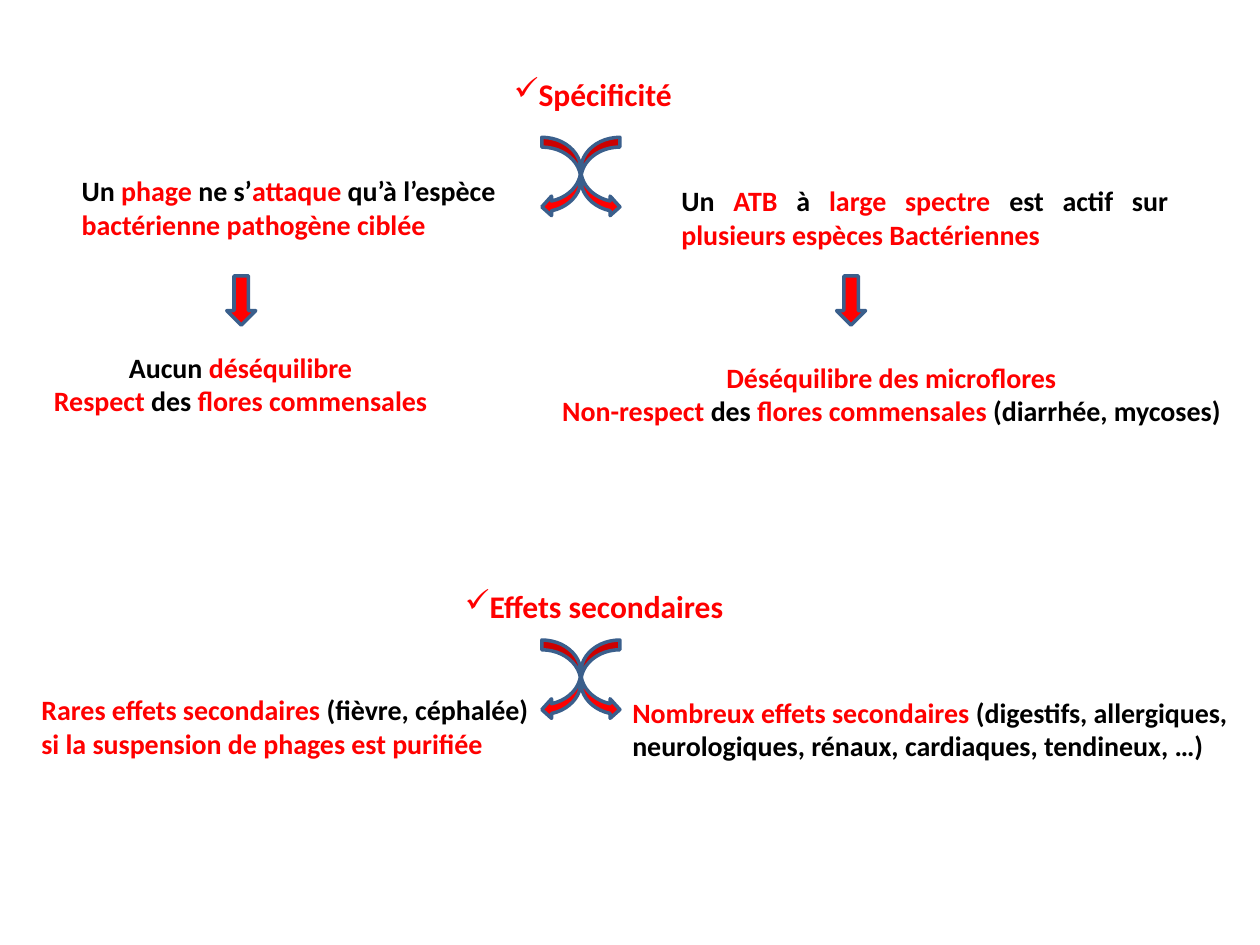
from dataclasses import dataclass

from lxml.etree import SubElement
from pptx import Presentation
from pptx.dml.color import RGBColor
from pptx.enum.shapes import MSO_SHAPE as Shape
from pptx.enum.text import MSO_AUTO_SIZE as AutoSize, PP_ALIGN as Align
from pptx.oxml.ns import qn
from pptx.util import Inches, Pt


@dataclass(frozen=True)
class Theme:
    font: str = "Calibri"
    red: RGBColor = RGBColor(0xFF, 0x00, 0x00)
    black: RGBColor = RGBColor(0x00, 0x00, 0x00)
    outline: RGBColor = RGBColor(0x3A, 0x5F, 0x8C)
    outline_width: Pt = Pt(2)
    heading: Pt = Pt(18)
    body: Pt = Pt(16)


theme = Theme()
deck = Presentation()
deck.slide_width, deck.slide_height = Inches(10), Inches(7.5)
page = deck.slides.add_slide(deck.slide_layouts[6])


def add_text(place, lines, size=theme.body, align=Align.LEFT, wrap=True, bullet=None):
    box = page.shapes.add_textbox(*map(Inches, place))
    frame = box.text_frame
    frame.word_wrap = wrap
    frame.auto_size = AutoSize.SHAPE_TO_FIT_TEXT
    for index, line in enumerate(lines):
        para = frame.paragraphs[0] if index == 0 else frame.add_paragraph()
        para.alignment = align
        if bullet:
            SubElement(para._p.get_or_add_pPr(), qn("a:buChar"), char=bullet)
        for part, words in enumerate(line.split("*")):
            if not words:
                continue
            span = para.add_run()
            span.text = words
            span.font.color.rgb = theme.red if part % 2 else theme.black
            style = {"name": theme.font, "size": size, "bold": True}
            for key, value in style.items():
                setattr(span.font, key, value)


def add_arrow(kind, *place):
    arrow = page.shapes.add_shape(kind, *map(Inches, place))
    arrow.shadow.inherit = False
    arrow.fill.solid()
    arrow.fill.fore_color.rgb = theme.red
    arrow.line.color.rgb = theme.outline
    arrow.line.width = theme.outline_width


headings = [
    ((3.98, 0.55, 1.47, 0.4), "*Spécificité*", 1.09),
    ((3.59, 4.61, 2.28, 0.4), "*Effets secondaires*", 5.08),
]
for place, title, arrow_top in headings:
    add_text(place, [title], size=theme.heading, wrap=False, bullet="✓")
    add_arrow(Shape.CURVED_RIGHT_ARROW, 4.61, arrow_top, 0.31, 0.63)
    add_arrow(Shape.CURVED_LEFT_ARROW, 4.3, arrow_top, 0.31, 0.63)

for left in (1.8, 6.64):
    add_arrow(Shape.DOWN_ARROW, left, 2.19, 0.23, 0.39)

add_text(
    (0.55, 1.33, 3.52, 0.64),
    ["Un *phage* ne s’*attaque* qu’à l’espèce", "*bactérienne pathogène ciblée*"],
)
add_text(
    (5.31, 1.41, 4.06, 0.64),
    ["Un *ATB* à *large spectre *est actif sur *plusieurs espèces Bactériennes*"],
    align=Align.JUSTIFY,
)
add_text(
    (0.31, 2.73, 3.2, 0.64),
    ["Aucun *déséquilibre*", "*Respect *des *flores commensales*"],
    align=Align.CENTER,
    wrap=False,
)
add_text(
    (4.3, 2.81, 5.55, 0.64),
    [
        "*Déséquilibre des microflores*",
        "*Non-respect *des *flores commensales *(diarrhée, mycoses)",
    ],
    align=Align.CENTER,
)
add_text(
    (0.23, 5.45, 4.22, 0.64),
    ["*Rares effets secondaires *(fièvre, céphalée) *si la suspension de phages est purifiée*"],
)
add_text(
    (4.92, 5.47, 5, 0.64),
    [
        "*Nombreux effets secondaires *(digestifs, allergiques, "
        "neurologiques, rénaux, cardiaques, tendineux, …)"
    ],
)

deck.save("out.pptx")
